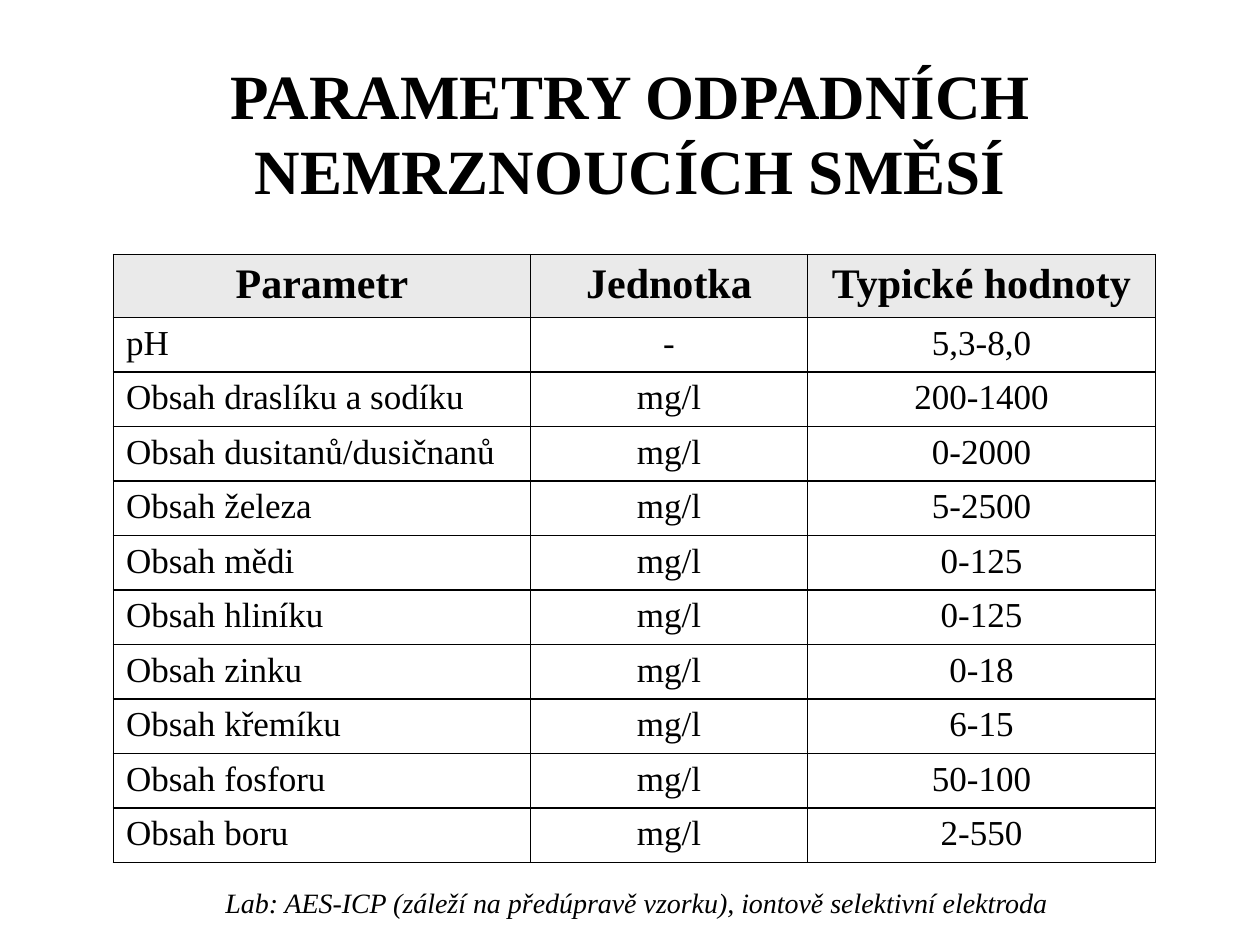
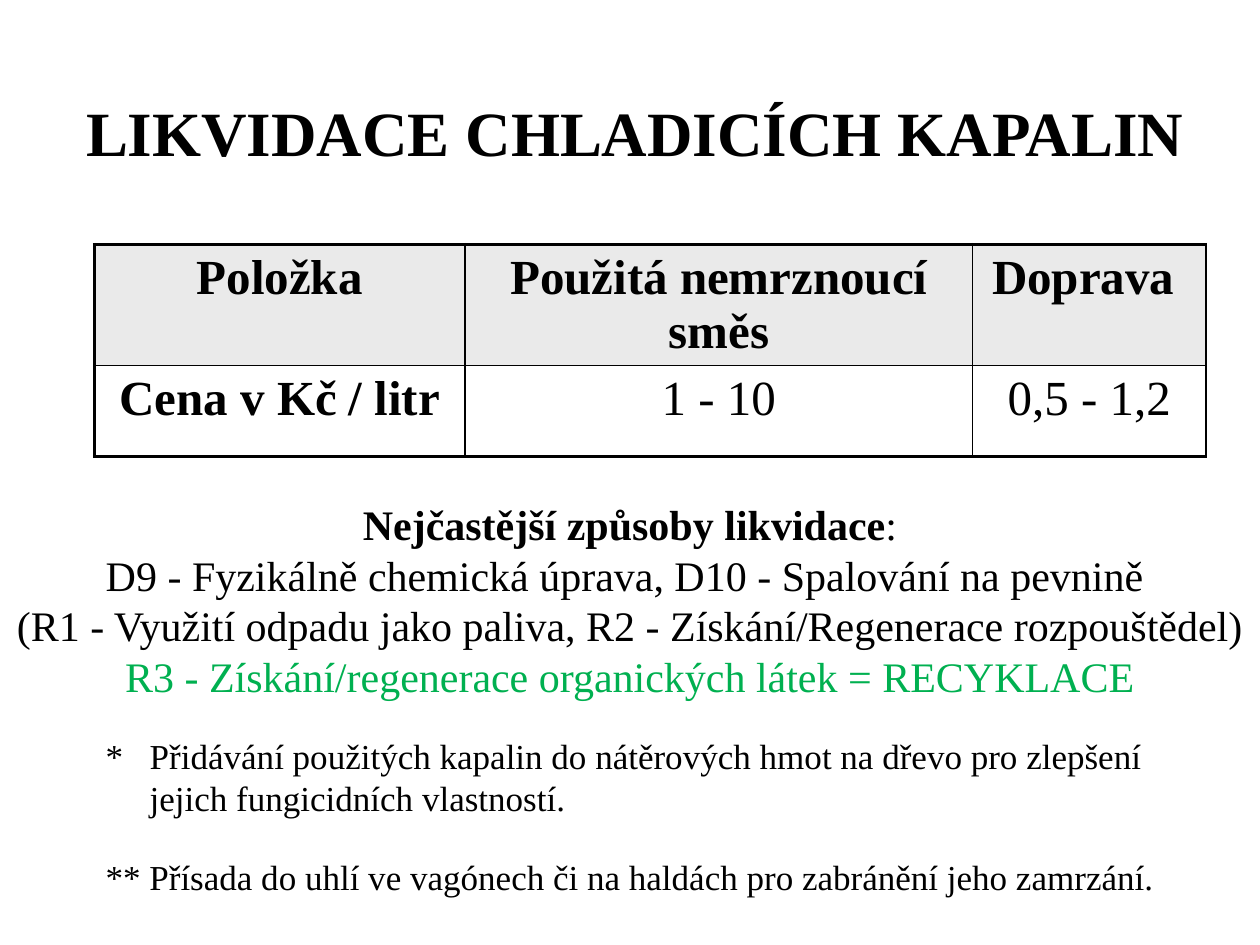
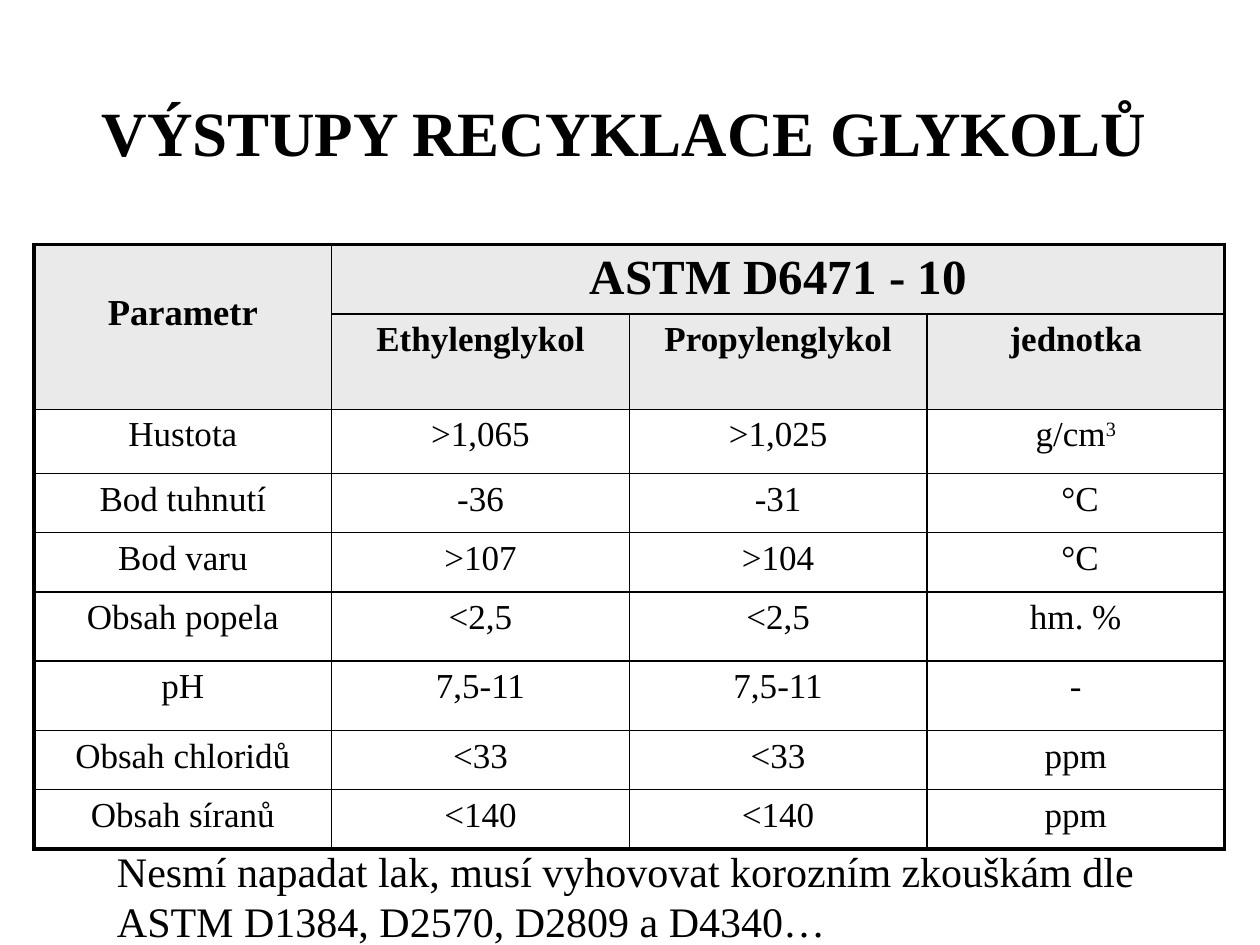
from lxml.etree import SubElement
from pptx import Presentation
from pptx.dml.color import RGBColor
from pptx.enum.text import MSO_ANCHOR, MSO_AUTO_SIZE, PP_ALIGN
from pptx.oxml.ns import qn
from pptx.util import Inches, Pt

FONT = "Times New Roman"
BLACK = RGBColor(0x00, 0x00, 0x00)
GREEN = RGBColor(0x00, 0xB0, 0x50)
HEADER_GREY = RGBColor(0xEA, 0xEA, 0xEA)
THIN, THICK = 1, 2.25
LEFT, CENTER = PP_ALIGN.LEFT, PP_ALIGN.CENTER

# Content: a paragraph is a string or a list of (text, format) runs.
# Boxes are left, top, width, height; outer borders are left, right, top, bottom.
SLIDES = [
    dict(
        title="PARAMETRY ODPADNÍCH NEMRZNOUCÍCH SMĚSÍ",
        title_box=(0.75, 0.42, 8.5, 1.25),
        table=dict(
            at=(0.9, 2.02),
            columns=[3.31, 2.2, 2.76],
            heights=[0.5] + [(4.83 - 0.5) / 10] * 10,
            outer=(THIN, THIN, THIN, THIN),
            header_rows=1, header_size=24, size=20, first_align=LEFT,
            rows=[
                ("Parametr", "Jednotka", "Typické hodnoty"),
                ("pH", "-", "5,3-8,0"),
                ("Obsah draslíku a sodíku", "mg/l", "200-1400"),
                ("Obsah dusitanů/dusičnanů", "mg/l", "0-2000"),
                ("Obsah železa", "mg/l", "5-2500"),
                ("Obsah mědi", "mg/l", "0-125"),
                ("Obsah hliníku", "mg/l", "0-125"),
                ("Obsah zinku", "mg/l", "0-18"),
                ("Obsah křemíku", "mg/l", "6-15"),
                ("Obsah fosforu", "mg/l", "50-100"),
                ("Obsah boru", "mg/l", "2-550"),
            ],
        ),
        texts=[
            dict(box=(1.69, 6.98, 6.93, 0.37), size=16, italic=True, paragraphs=[
                "Lab: AES-ICP (záleží na předúpravě vzorku), iontově selektivní elektroda",
            ]),
        ],
    ),
    dict(
        title="LIKVIDACE CHLADICÍCH KAPALIN",
        title_box=(0.51, 0.42, 9.06, 1.25),
        table=dict(
            at=(0.75, 1.94),
            columns=[2.94, 4.03, 1.85],
            heights=[0.96, 0.72],
            outer=(THICK, THIN, THICK, THICK),
            header_rows=1, header_size=28, size=28, first_bold=True,
            rows=[
                ("Položka", "Použitá nemrznoucí směs", "Doprava "),
                ("Cena v Kč / litr", "1 - 10", "0,5 - 1,2"),
            ],
        ),
        texts=[
            dict(box=(0.74, 5.78, 8.66, 1.72), size=20, hanging=0.35, gap=21, paragraphs=[
                "*\tPřidávání použitých kapalin do nátěrových hmot na dřevo "
                "pro zlepšení jejich fungicidních vlastností.",
                "** Přísada do uhlí ve vagónech či na haldách pro zabránění jeho zamrzání.",
            ]),
            dict(box=(0, 3.91, 10, 1.72), size=24, align=CENTER, paragraphs=[
                [("Nejčastější způsoby likvidace", dict(bold=True)), (":", {})],
                "D9 - Fyzikálně chemická úprava, D10 - Spalování na pevnině ",
                "(R1 - Využití odpadu jako paliva, R2 - Získání/Regenerace rozpouštědel)",
                [("R3 - Získání/regenerace organických látek = RECYKLACE",
                  dict(color=GREEN))],
            ]),
        ],
    ),
    dict(
        title="VÝSTUPY RECYKLACE GLYKOLŮ",
        title_box=(0.35, 0.42, 9.21, 1.25),
        table=dict(
            at=(0.27, 1.94),
            columns=[9.45 / 4] * 4,
            heights=[0.55, 0.75, 0.51, 0.47, 0.47, 0.55, 0.55, 0.47, 0.47],
            outer=(THICK, THICK, THICK, THICK),
            header_rows=2, header_size=20, size=20,
            merges=[((0, 0), (1, 0)), ((0, 1), (0, 3))],
            rows=[
                ([("Parametr", dict(size=36, baseline=-30))],
                 [("ASTM D6471 - 10", dict(size=28))], None, None),
                (None, "Ethylenglykol", "Propylenglykol", "jednotka"),
                ("Hustota", ">1,065", ">1,025", [("g/cm", {}), ("3", dict(baseline=30))]),
                ("Bod tuhnutí", "-36", "-31", " °C"),
                ("Bod varu", ">107", ">104", " °C"),
                ("Obsah popela", "<2,5", "<2,5", "hm. %"),
                ("pH", "7,5-11", "7,5-11", "-"),
                ("Obsah chloridů", "<33", "<33", "ppm"),
                ("Obsah síranů", "<140", "<140", "ppm"),
            ],
        ),
        texts=[
            dict(box=(0.83, 6.66, 8.5, 0.91), size=24, paragraphs=[
                "Nesmí napadat lak, musí vyhovovat korozním zkouškám dle "
                "ASTM D1384, D2570, D2809 a D4340…",
            ]),
        ],
    ),
]


def write(frame, paragraphs, align=LEFT, hanging=0, gap=0, **style):
    """Fill a text frame; run formats override the common style."""
    for index, content in enumerate(paragraphs):
        paragraph = frame.add_paragraph() if index else frame.paragraphs[0]
        paragraph.alignment = align
        if index and gap:
            paragraph.space_before = Pt(gap)
        if hanging:
            properties = paragraph._p.get_or_add_pPr()
            properties.set("marL", str(Inches(hanging)))
            properties.set("indent", str(-Inches(hanging)))
        for text, own in [(content, {})] if isinstance(content, str) else content:
            look = {**style, **own}
            run = paragraph.add_run()
            run.text = text
            run.font.name = FONT
            run.font.size = Pt(look["size"])
            run.font.bold = look.get("bold", False)
            run.font.italic = look.get("italic", False)
            run.font.color.rgb = look.get("color", BLACK)
            if "baseline" in look:
                run._r.get_or_add_rPr().set("baseline", str(look["baseline"] * 1000))


def set_borders(cell, widths):
    """Draw the left, right, top and bottom border of a cell."""
    properties = cell._tc.get_or_add_tcPr()
    for side, width in zip("LRTB", widths):
        line = SubElement(properties, qn(f"a:ln{side}"), w=str(Pt(width)))
        fill = SubElement(line, qn("a:solidFill"))
        SubElement(fill, qn("a:srgbClr"), val=str(BLACK))


def add_grid(slide, at, columns, heights, outer, header_rows, header_size, size, rows,
             merges=(), first_align=CENTER, first_bold=False):
    box = [Inches(n) for n in (*at, sum(columns), sum(heights))]
    grid = slide.shapes.add_table(len(rows), len(columns), *box).table
    grid.first_row = grid.horz_banding = False
    for column, width in zip(grid.columns, columns):
        column.width = Inches(width)
    for row, height in zip(grid.rows, heights):
        row.height = Inches(height)
    for start, end in merges:
        grid.cell(*start).merge(grid.cell(*end))

    for r, row in enumerate(rows):
        for c, content in enumerate(row):
            cell = grid.cell(r, c)
            header = r < header_rows
            span = cell.span_width if cell.is_merge_origin else 1
            at_edge = (c == 0, c + span == len(columns), r == 0, r == len(rows) - 1)
            set_borders(cell, [width if edge else THIN
                               for width, edge in zip(outer, at_edge)])
            if header:
                cell.fill.solid()
                cell.fill.fore_color.rgb = HEADER_GREY
            else:
                cell.fill.background()
            if content is not None:
                write(cell.text_frame, [content],
                      align=first_align if c == 0 and not header else CENTER,
                      size=header_size if header else size,
                      bold=header or (first_bold and c == 0))


def add_title(slide, text, box):
    title = slide.shapes.title
    title.left, title.top, title.width, title.height = (Inches(n) for n in box)
    title.text_frame.auto_size = MSO_AUTO_SIZE.NONE
    title.text_frame.vertical_anchor = MSO_ANCHOR.MIDDLE
    write(title.text_frame, [text], align=CENTER, size=36, bold=True)


def add_text(slide, box, paragraphs, **style):
    frame = slide.shapes.add_textbox(*(Inches(n) for n in box)).text_frame
    frame.word_wrap = True
    write(frame, paragraphs, **style)


def main():
    deck = Presentation()
    deck.slide_width, deck.slide_height = Inches(10), Inches(7.5)
    title_only = deck.slide_layouts[5]
    for content in SLIDES:
        slide = deck.slides.add_slide(title_only)
        add_title(slide, content["title"], content["title_box"])
        add_grid(slide, **content["table"])
        for text in content["texts"]:
            add_text(slide, **text)
    deck.save("out.pptx")


if __name__ == "__main__":
    main()
